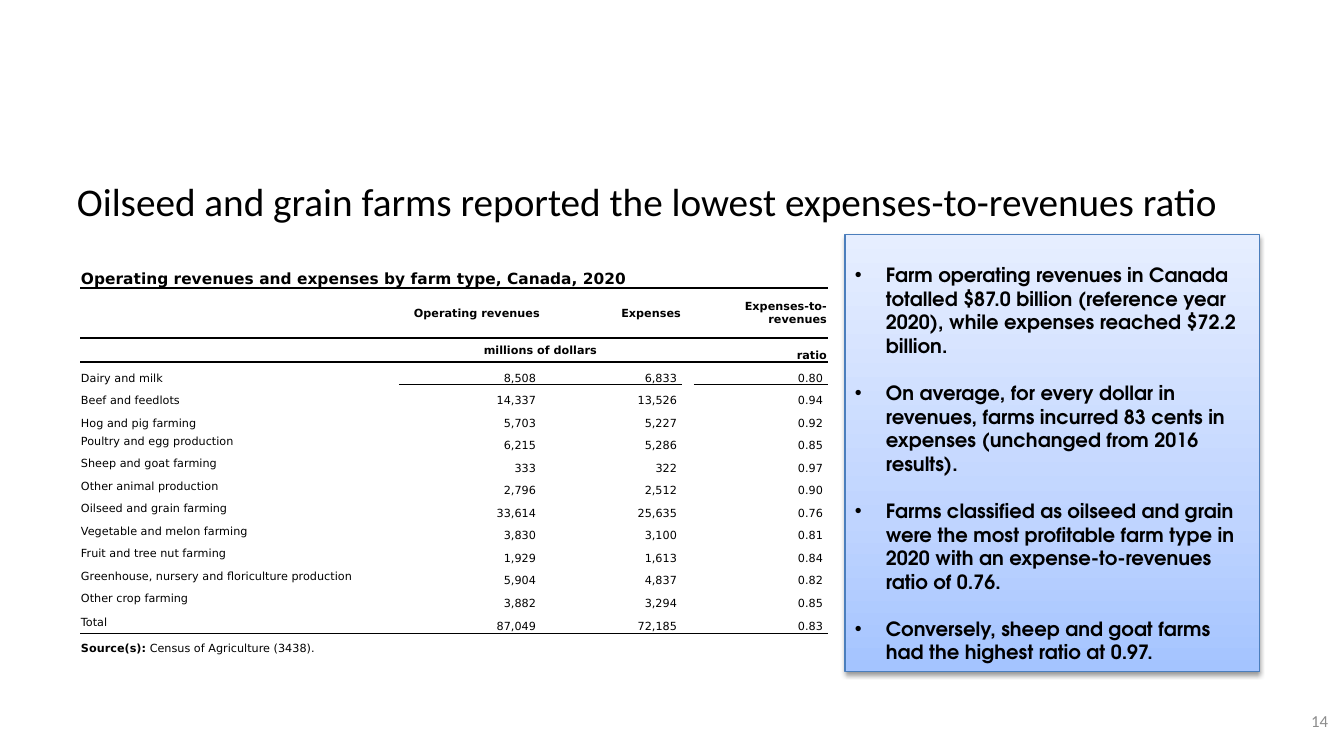
from lxml import etree
from pptx import Presentation
from pptx.dml.color import RGBColor
from pptx.enum import shapes, text
from pptx.oxml.ns import qn
from pptx.util import Pt

SCALE = 914400 / 100.8
LEFT, MID, RIGHT = text.PP_ALIGN.LEFT, text.PP_ALIGN.CENTER, text.PP_ALIGN.RIGHT
CENTRE, BOTTOM = text.MSO_ANCHOR.MIDDLE, text.MSO_ANCHOR.BOTTOM


class Theme:
    ink, grey, white, edge = "000000", "8C8C8C", "FFFFFF", "4B7EBC"
    stops = [(0, "A4C4FF"), (35, "BFD4FF"), (100, "E6EEFF")]
    head = dict(name="Calibri", size=28, color=ink)
    page = dict(name="Calibri", size=12, color=grey)
    note = dict(name="TeX Gyre Adventor", size=14, color=ink, bold=True)
    body = dict(name="DejaVu Sans", size=8, color=ink, bold=False)
    bold = dict(body, bold=True)
    name = dict(bold, size=11)
    plain = "{2D5ABB26-0587-4C30-8999-92F81FD0307C}"


COLS = [319, 142, 141, 12, 134]
TITLE = "Operating revenues and expenses by farm type, Canada, 2020"
FARMS = [
    ("Dairy and milk", "8,508", "6,833", "0.80"),
    ("Beef and feedlots", "14,337", "13,526", "0.94"),
    ("Hog and pig farming", "5,703", "5,227", "0.92"),
    ("Poultry and egg production", "6,215", "5,286", "0.85"),
    ("Sheep and goat farming", "333", "322", "0.97"),
    ("Other animal production", "2,796", "2,512", "0.90"),
    ("Oilseed and grain farming", "33,614", "25,635", "0.76"),
    ("Vegetable and melon farming", "3,830", "3,100", "0.81"),
    ("Fruit and tree nut farming", "1,929", "1,613", "0.84"),
    ("Greenhouse, nursery and floriculture production", "5,904", "4,837", "0.82"),
    ("Other crop farming", "3,882", "3,294", "0.85"),
    ("Total", "87,049", "72,185", "0.83"),
]
ROWS = [38, 50, 24] + [23 - i % 2 for i in range(len(FARMS) - 1)] + [24, 22]
LAST = len(ROWS) - 1
NOTES = [
    "Farm operating revenues in Canada totalled $87.0 billion (reference year "
    "2020), while expenses reached $72.2 billion.",
    "On average, for every dollar in revenues, farms incurred 83 cents in "
    "expenses (unchanged from 2016 results).",
    "Farms classified as oilseed and grain were the most profitable farm type in "
    "2020 with an expense-to-revenues ratio of 0.76.",
    "Conversely, sheep and goat farms had the highest ratio at 0.97.",
]


def px(*vals):
    return [round(v * SCALE) for v in vals]


def node(root, tag, **attrs):
    return etree.SubElement(root, qn(tag), {k: str(v) for k, v in attrs.items()})


def tint(root, hue):
    return node(root, "a:srgbClr", val=hue)


def write(para, words, style, align=LEFT):
    para.alignment = align
    run = para.add_run()
    run.text = words
    for key, val in style.items():
        if key == "color":
            run.font.color.rgb = RGBColor.from_string(val)
        else:
            setattr(run.font, key, Pt(val) if key == "size" else val)


def label(slide, box, words, style, align=LEFT):
    frame = slide.shapes.add_textbox(*px(*box)).text_frame
    frame.word_wrap = True
    frame.vertical_anchor = CENTRE
    write(frame.paragraphs[0], words, style, align)


def panel(slide, box, notes):
    """Bulleted notes on a shaded card with a soft shadow."""
    card = slide.shapes.add_shape(shapes.MSO_SHAPE.RECTANGLE, *px(*box))
    props = card.element.spPr
    grad = node(props, "a:gradFill", rotWithShape=1)
    stops = node(grad, "a:gsLst")
    for pos, hue in Theme.stops:
        tint(node(stops, "a:gs", pos=pos * 1000), hue)
    node(grad, "a:lin", ang=270 * 60000, scaled=0)
    card.line.color.rgb = RGBColor.from_string(Theme.edge)
    card.line.width = Pt(0.75)
    card.shadow.inherit = False
    shade = node(props.find(qn("a:effectLst")), "a:outerShdw", blurRad=40000,
                 dist=20000, dir=90 * 60000, rotWithShape=0)
    node(tint(shade, Theme.ink), "a:alpha", val=38000)

    frame = card.text_frame
    frame.word_wrap = True
    frame.auto_size = text.MSO_AUTO_SIZE.SHAPE_TO_FIT_TEXT
    frame.vertical_anchor = text.MSO_ANCHOR.TOP
    frame.margin_top, frame.margin_bottom = px(28, 5)
    for i, words in enumerate(notes):
        para = frame.add_paragraph() if i else frame.paragraphs[0]
        if i:
            para.space_before = Pt(17)
        props = para._p.get_or_add_pPr()
        dent = px(31)[0]
        props.set("marL", str(dent))
        props.set("indent", str(-dent))
        node(props, "a:buFont", typeface="Arial")
        node(props, "a:buChar", char="•")
        write(para, words, Theme.note)


def rule(grid, row, cols):
    """Draw a line between a row and the next one."""
    for col in cols:
        for place, side in ((row, "a:lnB"), (row + 1, "a:lnT")):
            props = grid.cell(place, col)._tc.get_or_add_tcPr()
            line = node(props, side, w=Pt(1))
            tint(node(line, "a:solidFill"), Theme.ink)


def put(grid, row, col, words, style, align=LEFT, anchor=BOTTOM, pad=1):
    cell = grid.cell(row, col)
    cell.vertical_anchor = anchor
    cell.margin_right = px(pad)[0]
    write(cell.text_frame.paragraphs[0], words, style, align)


def farms(slide, left, top):
    frame = slide.shapes.add_table(len(ROWS), len(COLS),
                                   *px(left, top, sum(COLS), sum(ROWS)))
    grid = frame.table
    grid.first_row = grid.horz_banding = False
    next(frame.element.iter(qn("a:tableStyleId"))).text = Theme.plain
    for col, wide in zip(grid.columns, COLS):
        col.width = px(wide)[0]
    for row, high in zip(grid.rows, ROWS):
        row.height = px(high)[0]

    for row, cols in ((0, range(5)), (1, range(5)), (2, (1, 2, 4)), (LAST - 1, range(5))):
        rule(grid, row, cols)
    for i, row in enumerate(grid.rows):
        for cell in row.cells:
            cell.margin_left, cell.margin_right, cell.margin_top, cell.margin_bottom = px(1, 1, 1, 0)
            if i:
                cell.fill.solid()
                cell.fill.fore_color.rgb = RGBColor.from_string(Theme.white)
            else:
                cell.fill.background()
            node(cell.text_frame.paragraphs[0]._p, "a:endParaRPr", sz=Theme.body["size"] * 100)
    for row, start, end in ((0, 0, 4), (2, 1, 2), (LAST, 0, 2)):
        grid.cell(row, start).merge(grid.cell(row, end))

    put(grid, 0, 0, TITLE, Theme.name)
    for col, words in ((1, "Operating revenues"), (2, "Expenses"), (4, "Expenses-to-revenues")):
        put(grid, 1, col, words, Theme.bold, RIGHT, CENTRE)
    put(grid, 2, 1, "millions of dollars", Theme.bold, MID, CENTRE)
    put(grid, 2, 4, "ratio", Theme.bold, RIGHT)
    for i, (farm, *vals) in enumerate(FARMS):
        put(grid, i + 3, 0, farm, Theme.body, anchor=BOTTOM if i < 3 else CENTRE)
        for col, val in zip((1, 2, 4), vals):
            put(grid, i + 3, col, val, Theme.body, RIGHT, pad=5)
    put(grid, LAST, 0, "Source(s):", Theme.bold)
    put(grid, LAST, 0, " Census of Agriculture (3438).", Theme.body)


def main():
    deck = Presentation()
    deck.slide_width, deck.slide_height = px(1344, 756)
    slide = deck.slides.add_slide(deck.slide_layouts[6])
    label(slide, (67, 167, 1210, 68),
          "Oilseed and grain farms reported the lowest expenses-to-revenues ratio", Theme.head)
    label(slide, (1025, 701, 313, 40), "14", Theme.page, RIGHT)
    panel(slide, (845, 235, 415, 437), NOTES)
    farms(slide, 80, 250)
    deck.save("out.pptx")


if __name__ == "__main__":
    main()
